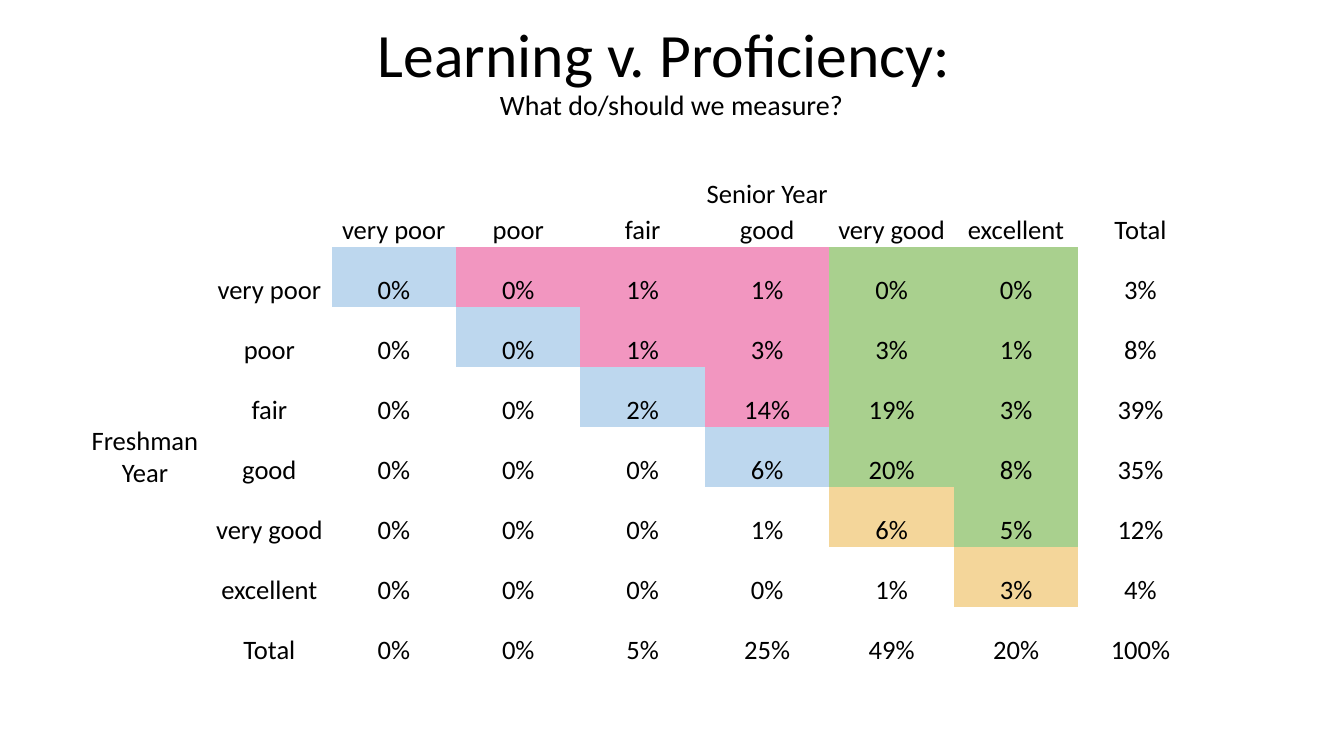
from dataclasses import dataclass
from typing import Optional

from pptx import Presentation
from pptx import util as u
from pptx.dml.color import RGBColor
from pptx.enum import text
from pptx.oxml.ns import qn


@dataclass(frozen=True)
class Theme:
    font: str = "Calibri"
    ink: str = "000000"
    same_low: str = "BDD7EE"
    same_high: str = "F4D69A"
    gain_low: str = "F296C0"
    gain_high: str = "A9D08E"
    title: int = 44
    subtitle: int = 20
    body: int = 19
    no_grid: str = "{2D5ABB26-0587-4C30-8999-92F81FD0307C}"


@dataclass(frozen=True)
class FreshmanRow:
    label: str
    shares: tuple[int, ...]


THEME = Theme()
LEVELS = ("very poor", "poor", "fair", "good", "very good", "excellent")
PROFICIENT = LEVELS.index("very good")
ROWS = (
    FreshmanRow("very poor", (0, 0, 1, 1, 0, 0, 3)),
    FreshmanRow("poor", (0, 0, 1, 3, 3, 1, 8)),
    FreshmanRow("fair", (0, 0, 2, 14, 19, 3, 39)),
    FreshmanRow("good", (0, 0, 0, 6, 20, 8, 35)),
    FreshmanRow("very good", (0, 0, 0, 1, 6, 5, 12)),
    FreshmanRow("excellent", (0, 0, 0, 0, 1, 3, 4)),
    FreshmanRow("Total", (0, 0, 5, 25, 49, 20, 100)),
)
HEADER_ROWS = 2
LABEL_COLS = 2
HEADER_HEIGHTS = (0.78, 0.36)
ROW_HEIGHT = 0.595
TABLE_WIDTH = 11.11


def add_run(p, words: str, size: int) -> None:
    r = p.add_run()
    r.text = words
    r.font.name = THEME.font
    r.font.size = u.Pt(size)
    r.font.color.rgb = RGBColor.from_string(THEME.ink)


def add_title(s) -> None:
    box = s.shapes.add_textbox(u.Inches(0.45), u.Inches(0), u.Inches(12.42), u.Inches(1.45))
    tf = box.text_frame
    tf.word_wrap = True
    tf.vertical_anchor = text.MSO_ANCHOR.MIDDLE
    p = tf.paragraphs[0]
    p.alignment = text.PP_ALIGN.CENTER
    p.line_spacing = 0.9
    add_run(p, "Learning v. Proficiency: ", THEME.title)
    p.add_line_break()
    add_run(p, "What do/should we measure?", THEME.subtitle)


def change_color(freshman: int, senior: int) -> Optional[str]:
    """Colour for a move between levels; None for declines and totals."""
    if senior >= len(LEVELS) or senior < freshman:
        return None
    high = senior >= PROFICIENT
    if senior == freshman:
        return THEME.same_high if high else THEME.same_low
    return THEME.gain_high if high else THEME.gain_low


def write_cell(cell, words: str, anchor=text.MSO_ANCHOR.BOTTOM) -> None:
    cell.vertical_anchor = anchor
    p = cell.text_frame.paragraphs[0]
    p.alignment = text.PP_ALIGN.CENTER
    add_run(p, words, THEME.body)


def add_blank_table(s):
    """Add the sized table with no style, fills or cell padding."""
    n_rows, n_cols = HEADER_ROWS + len(ROWS), LABEL_COLS + len(LEVELS) + 1
    heights = HEADER_HEIGHTS + (ROW_HEIGHT,) * len(ROWS)
    frame = s.shapes.add_table(n_rows, n_cols, u.Inches(0.82), u.Inches(1.31),
                               u.Inches(TABLE_WIDTH), u.Inches(sum(heights)))
    for style in frame.element.iter(qn("a:tableStyleId")):
        style.text = THEME.no_grid
    table = frame.table
    table.first_row = table.horz_banding = False
    for col in table.columns:
        col.width = u.Inches(TABLE_WIDTH / n_cols)
    for row, height in zip(table.rows, heights):
        row.height = u.Inches(height)
    for cell in table.iter_cells():
        cell.fill.background()
        cell.margin_left = cell.margin_right = cell.margin_top = u.Inches(0.01)
        cell.margin_bottom = 0
    return table


def add_proficiency_table(s) -> None:
    table = add_blank_table(s)
    last_row, last_col = len(table.rows) - 1, len(table.columns) - 1

    senior = table.cell(0, LABEL_COLS)
    senior.merge(table.cell(0, last_col))
    write_cell(senior, "Senior Year")
    freshman = table.cell(HEADER_ROWS, 0)
    freshman.merge(table.cell(last_row, 0))
    write_cell(freshman, "Freshman Year", text.MSO_ANCHOR.MIDDLE)

    for j, label in enumerate(LEVELS + ("Total",)):
        write_cell(table.cell(1, LABEL_COLS + j), label)
    for i, row in enumerate(ROWS):
        write_cell(table.cell(HEADER_ROWS + i, 1), row.label)
        for j, share in enumerate(row.shares):
            cell = table.cell(HEADER_ROWS + i, LABEL_COLS + j)
            write_cell(cell, f"{share}%")
            color = change_color(i, j)
            if color:
                cell.fill.solid()
                cell.fill.fore_color.rgb = RGBColor.from_string(color)


def main() -> None:
    prs = Presentation()
    prs.slide_width, prs.slide_height = u.Inches(13.33), u.Inches(7.5)
    s = prs.slides.add_slide(prs.slide_layouts[6])
    add_title(s)
    add_proficiency_table(s)
    prs.save("out.pptx")


if __name__ == "__main__":
    main()
